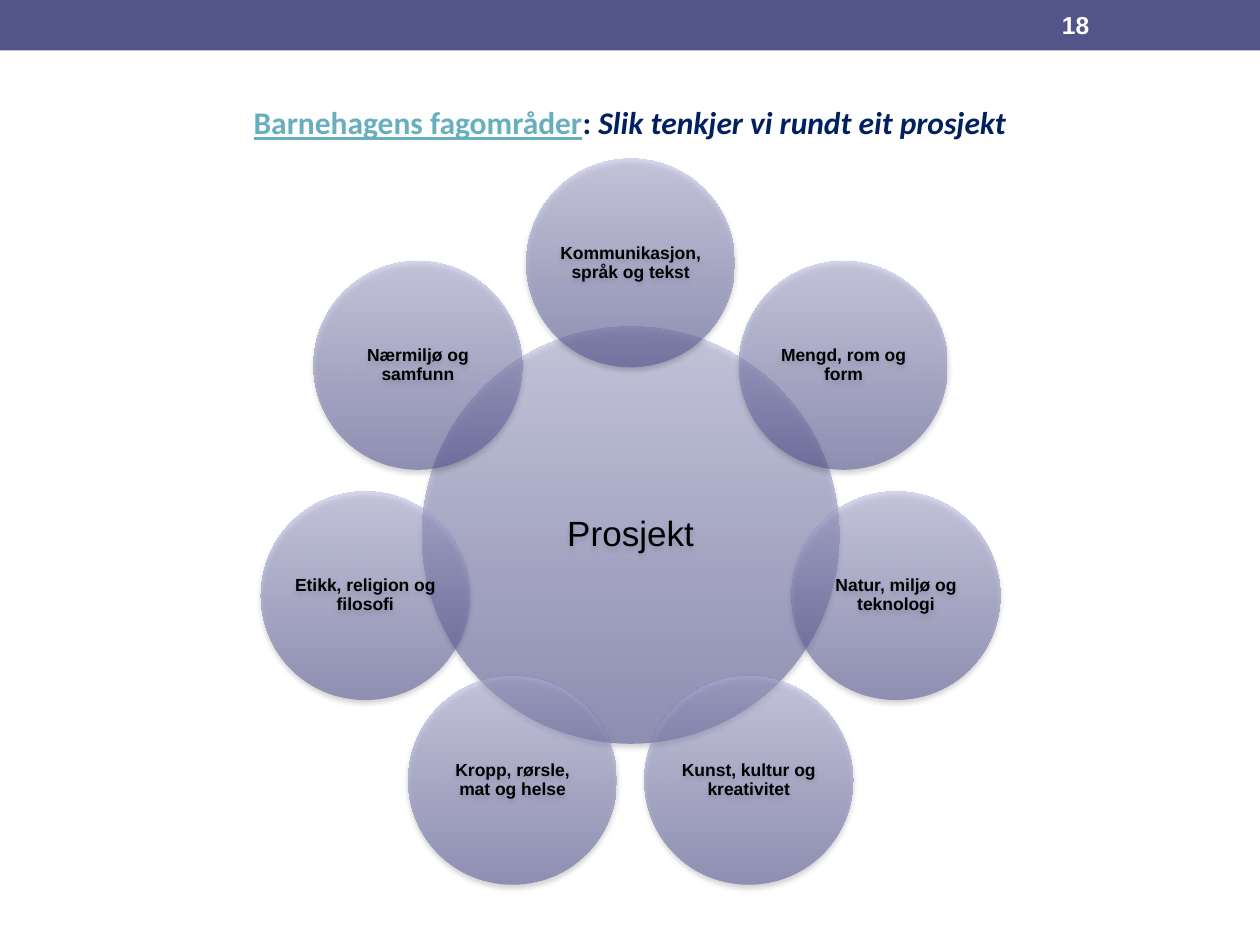
import math
from lxml import etree
from pptx import Presentation, util as u
from pptx.dml.color import RGBColor
from pptx.enum import shapes, text
from pptx.oxml import ns

HUES = {"bar": "53548A", "link": "67AFBD", "navy": "002060", "dark": "4B4C92",
        "light": "B3B3DF", "black": "000000", "white": "FFFFFF"}
WIDE, HIGH = 10, 7.5
AREAS = ["Kommunikasjon, språk og tekst", "Mengd, rom og form",
         "Natur, miljø og teknologi", "Kunst, kultur og kreativitet",
         "Kropp, rørsle, mat og helse", "Etikk, religion og filosofi",
         "Nærmiljø og samfunn"]


def hue(name):
    return RGBColor.from_string(HUES[name])


def sub(node, tag, **attrs):
    return etree.SubElement(node, ns.qn(tag), attrs)


def inches(box):
    return [u.Inches(n) for n in box]


def write(shape, runs, pads, align=text.PP_ALIGN.CENTER, space=None):
    frame = shape.text_frame
    frame.word_wrap = True
    frame.vertical_anchor = text.MSO_ANCHOR.MIDDLE
    for side, pad in zip(("left", "top", "right", "bottom"), pads):
        setattr(frame, "margin_" + side, u.Inches(pad))
    para = frame.paragraphs[0]
    para.alignment = align
    para.line_spacing = space
    for words, color, form in runs:
        run = para.add_run()
        run.text = words
        run.font.color.rgb = hue(color)
        for key, value in form.items():
            setattr(run.font, key, value)


def header(slide, box):
    left, top, wide, high = box
    bar = slide.shapes.add_shape(shapes.MSO_SHAPE.RECTANGLE, *inches(box))
    bar.shadow.inherit = False
    bar.fill.solid()
    bar.fill.fore_color.rgb = hue("bar")
    bar.line.fill.background()
    spot = (left + wide * 0.833, top + high * 0.05, wide * 0.117, high * 0.9)
    page = slide.shapes.add_textbox(*inches(spot))
    form = dict(name="Arial", size=u.Pt(14), bold=True)
    write(page, [("18", "white", form)], (0.1, 0.05, 0.1, 0.05),
          text.PP_ALIGN.LEFT)


def title(slide, box):
    form = dict(name="Calibri", size=u.Pt(18), bold=True)
    runs = [("Barnehagens fagområder", "link", dict(form, underline=True)),
            (": ", "navy", form),
            ("Slik tenkjer vi rundt eit prosjekt", "navy",
             dict(form, italic=True))]
    write(slide.shapes.add_textbox(*inches(box)), runs,
          (0.1, 0.05, 0.1, 0.35))


def disc(slide, mid, size, words, form, pad):
    box = (mid[0] - size / 2, mid[1] - size / 2, size, size)
    oval = slide.shapes.add_shape(shapes.MSO_SHAPE.OVAL, *inches(box))
    oval.line.fill.background()
    oval.fill.gradient()
    oval.fill.gradient_angle = 90
    for stop, name, place in zip(oval.fill.gradient_stops,
                                 ("dark", "light"), (0, 1)):
        stop.color.rgb = hue(name)
        stop.position = place
    for color in oval.element.spPr.iter(ns.qn("a:srgbClr")):
        sub(color, "a:alpha", val="50000")
    oval.shadow.inherit = False
    glow = oval.element.spPr.find(ns.qn("a:effectLst"))
    cast = sub(glow, "a:outerShdw", blurRad=str(u.Pt(3.1)),
               dist=str(u.Pt(1.8)), dir="5400000", rotWithShape="0")
    sub(sub(cast, "a:srgbClr", val=HUES["black"]), "a:alpha", val="35000")
    write(oval, [(words, "black", dict(form, name="Arial"))], [pad] * 4,
          space=0.9)


def wheel(slide, box):
    left, top, wide, high = box
    hub = wide * 0.564
    petal = hub / 2
    ring = wide * 0.368
    mid = (left + wide / 2, top + petal / 2 + ring)
    disc(slide, mid, hub, "Prosjekt", dict(size=u.Pt(20)), 0.03)
    for i, area in enumerate(AREAS):
        turn = math.tau * i / len(AREAS)
        spot = (mid[0] + ring * math.sin(turn), mid[1] - ring * math.cos(turn))
        disc(slide, spot, petal, area, dict(size=u.Pt(10), bold=True), 0.01)


def main():
    deck = Presentation()
    deck.slide_width, deck.slide_height = u.Inches(WIDE), u.Inches(HIGH)
    slide = deck.slides.add_slide(deck.slide_layouts[6])
    header(slide, (0, 0, WIDE, 0.4))
    title(slide, (WIDE * 0.05, 0.58, WIDE * 0.9, 1.08))
    wheel(slide, (2.07, 1.26, 5.87, 5.76))
    deck.save("out.pptx")


if __name__ == "__main__":
    main()
